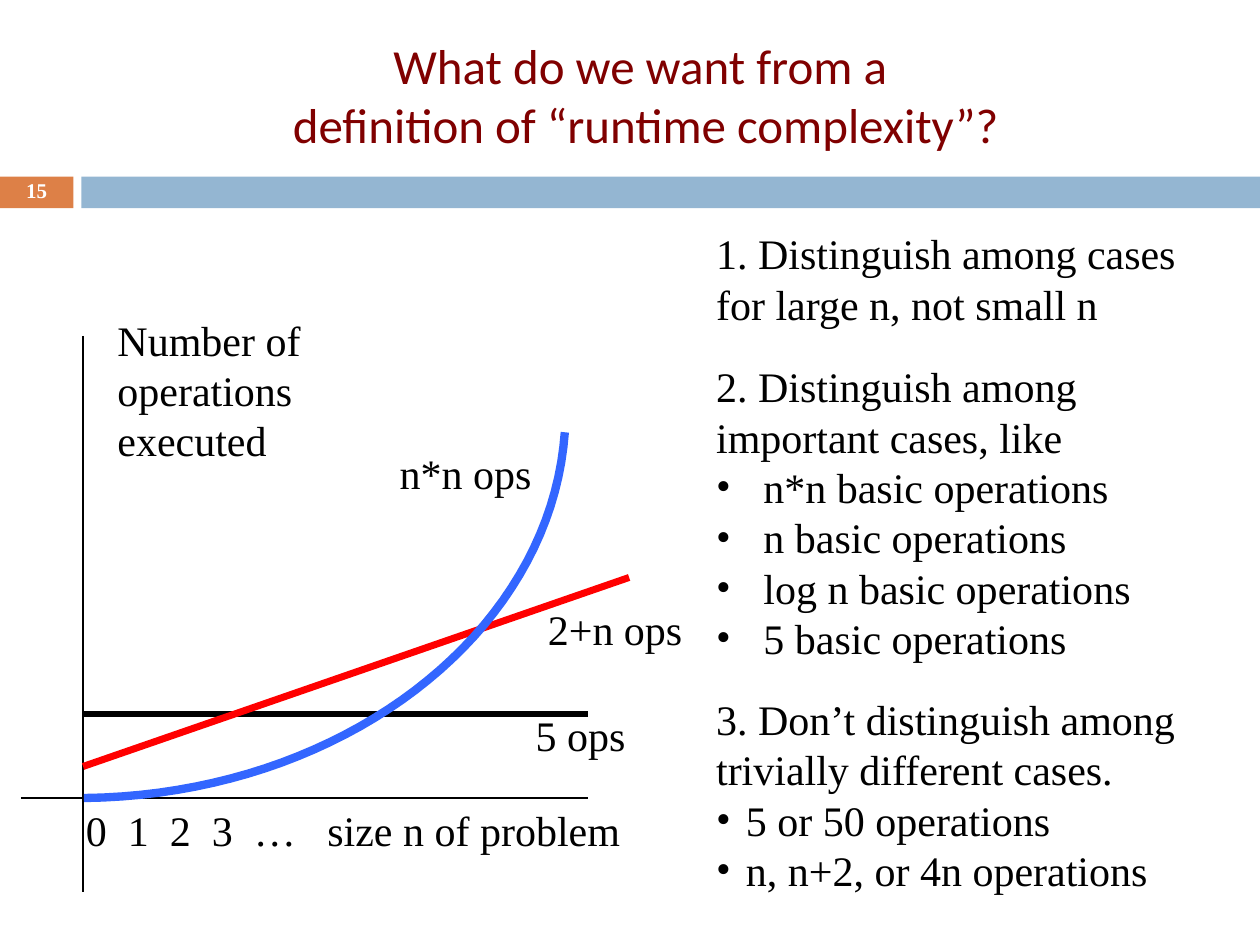
import pptx
import pptx.dml.color
import pptx.enum.shapes
import pptx.enum.text
import pptx.oxml.ns
import pptx.oxml.xmlchemy
import pptx.util
from lxml import etree

Pt = pptx.util.Pt
qn = pptx.oxml.ns.qn
Align = pptx.enum.text.PP_ALIGN
Anchor = pptx.enum.text.MSO_ANCHOR
AutoSize = pptx.enum.text.MSO_AUTO_SIZE

COLORS = {
    "text": "000000",
    "title": "800000",
    "number": "FFFFFF",
    "badge": "DD8047",
    "band": "94B6D2",
    "constant": "000000",
    "linear": "FF0000",
    "quadratic": "3366FF",
}
SERIF = "Times New Roman"
ORIGIN_X, AXIS_Y = 47.5, 456
LIST_LEFT, LIST_WIDTH = 402, 300


def rgb(name):
    return pptx.dml.color.RGBColor.from_string(COLORS[name])


def place(shape, left, top, width, height):
    shape.left, shape.top = Pt(left), Pt(top)
    shape.width, shape.height = Pt(width), Pt(height)


def format_runs(paragraph, size=24, font=SERIF, color="text", bold=False):
    for run in paragraph.runs:
        run.font.size = Pt(size)
        run.font.name = font
        run.font.bold = bold
        run.font.color.rgb = rgb(color)


def add_bar(slide, left, top, width, height, color):
    shape = slide.shapes.add_shape(
        pptx.enum.shapes.MSO_SHAPE.RECTANGLE, Pt(left), Pt(top), Pt(width), Pt(height))
    shape.shadow.inherit = False
    shape.fill.solid()
    shape.fill.fore_color.rgb = rgb(color)
    shape.line.fill.background()


def add_label(slide, text, left, top, width, height, wrap=False):
    shape = slide.shapes.add_textbox(Pt(left), Pt(top), Pt(width), Pt(height))
    frame = shape.text_frame
    frame.word_wrap = wrap
    frame.text = text
    format_runs(frame.paragraphs[0])
    return shape


def add_tick_labels(slide, labels, left, top, step):
    """One line of text whose labels stand on evenly spaced tab stops."""
    shape = add_label(slide, "\t".join(labels), left, top, 136, 37, wrap=True)
    properties = shape.text_frame.paragraphs[0]._p.get_or_add_pPr()
    stops = etree.SubElement(properties, qn("a:tabLst"))
    for index in range(1, len(labels)):
        etree.SubElement(stops, qn("a:tab"), pos=str(Pt(step * index)), algn="l")


def add_line(slide, start, end, width, color):
    line = slide.shapes.add_connector(
        pptx.enum.shapes.MSO_CONNECTOR.STRAIGHT, *map(Pt, start + end))
    line.line.width = Pt(width)
    line.line.color.rgb = rgb(color)
    etree.SubElement(line._element.spPr, qn("a:effectLst"))


def add_curve(slide, controls, width, color, steps=40):
    """Draw a cubic Bezier curve through its four control points."""
    def point(t):
        weights = ((1 - t) ** 3, 3 * t * (1 - t) ** 2, 3 * t ** 2 * (1 - t), t ** 3)
        return tuple(Pt(sum(w * c[axis] for w, c in zip(weights, controls)))
                     for axis in (0, 1))

    points = [point(step / steps) for step in range(steps + 1)]
    builder = slide.shapes.build_freeform(*points[0])
    builder.add_line_segments(points[1:], close=False)
    shape = builder.convert_to_shape()
    shape.shadow.inherit = False
    shape.fill.background()
    shape.line.width = Pt(width)
    shape.line.color.rgb = rgb(color)


def set_bullet(paragraph, indent):
    """Hang a bullet by the indent, or remove it when the indent is zero."""
    properties = paragraph._p.get_or_add_pPr()
    properties.set("marL", str(Pt(indent)))
    properties.set("indent", str(Pt(-indent)))
    if indent:
        etree.SubElement(properties, qn("a:buFont"), typeface=SERIF)
        etree.SubElement(properties, qn("a:buChar"), char="•")
    else:
        etree.SubElement(properties, qn("a:buNone"))


def fill_title(title, text):
    place(title, 48, 24, 642, 60)
    frame = title.text_frame
    frame.text = text
    frame.auto_size = AutoSize.NONE
    frame.vertical_anchor = Anchor.MIDDLE
    frame.paragraphs[0].alignment = Align.CENTER
    format_runs(frame.paragraphs[0], 28, "Calibri", "title")


def fill_point(body, top, height, heading, bullets, indent):
    place(body, LIST_LEFT, top, LIST_WIDTH, height)
    frame = body.text_frame
    frame.text = "\n".join([heading] + bullets)
    frame.auto_size = AutoSize.NONE
    frame.vertical_anchor = Anchor.TOP
    for index, paragraph in enumerate(frame.paragraphs):
        paragraph.space_before = Pt(0)
        set_bullet(paragraph, indent if index else 0)
        format_runs(paragraph)


def add_header(slide):
    add_bar(slide, 0, 101, 42, 18, "badge")
    add_bar(slide, 46.5, 101, 673.5, 18, "band")
    number = add_label(slide, "15", 0, 100, 42, 19.5, wrap=True)
    number.text_frame.vertical_anchor = Anchor.MIDDLE
    paragraph = number.text_frame.paragraphs[0]
    paragraph.alignment = Align.CENTER
    paragraph.line_spacing = 0.8
    format_runs(paragraph, 12, color="number", bold=True)


def add_growth_graph(slide):
    add_line(slide, (ORIGIN_X, 192), (ORIGIN_X, 510), 1.5, "text")
    add_line(slide, (12, AXIS_Y), (336, AXIS_Y), 1.5, "text")
    add_line(slide, (ORIGIN_X, 408), (336, 408), 3, "constant")
    add_line(slide, (ORIGIN_X, 438), (359.5, 330), 4, "linear")
    add_curve(slide, [(322.8, 247), (314.6, 363), (194.4, 454.5), (48, AXIS_Y)],
              4.75, "quadratic")
    add_label(slide, "Number of operations executed", 60, 176, 162, 94, wrap=True)
    add_label(slide, "n*n ops", 221.3, 252, 90.5, 36)
    add_label(slide, "2+n ops", 306, 341.5, 92, 36.5)
    add_label(slide, "5 ops", 299, 402, 66, 36.5)
    add_label(slide, "size n of problem", 180, AXIS_Y, 183.5, 36.5)
    add_tick_labels(slide, ["0", "1", "2", "3", "…"], 42, AXIS_Y, 24)


def main():
    presentation = pptx.Presentation()
    presentation.slide_width, presentation.slide_height = Pt(720), Pt(540)
    comparison_layout = presentation.slide_layouts[4]
    slide = presentation.slides.add_slide(comparison_layout)
    title, *bodies = slide.placeholders

    add_header(slide)
    fill_title(title, "What do we want from a \vdefinition of “runtime complexity”?")
    add_growth_graph(slide)

    points = [
        (126.5, 66, "1. Distinguish among cases for large n, not small n", [], 0),
        (202.5, 181.5, "2. Distinguish among important cases, like",
         ["n*n basic operations", "n basic operations",
          "log n basic operations", "5 basic operations"], 27),
        (392.5, 124, "3. Don’t distinguish among trivially different cases.",
         ["5 or 50 operations", "n, n+2, or 4n operations"], 17),
    ]
    for body, point in zip(bodies, points):
        fill_point(body, *point)
    unused = bodies[len(points)]._element
    unused.getparent().remove(unused)

    presentation.save("out.pptx")


if __name__ == "__main__":
    main()
